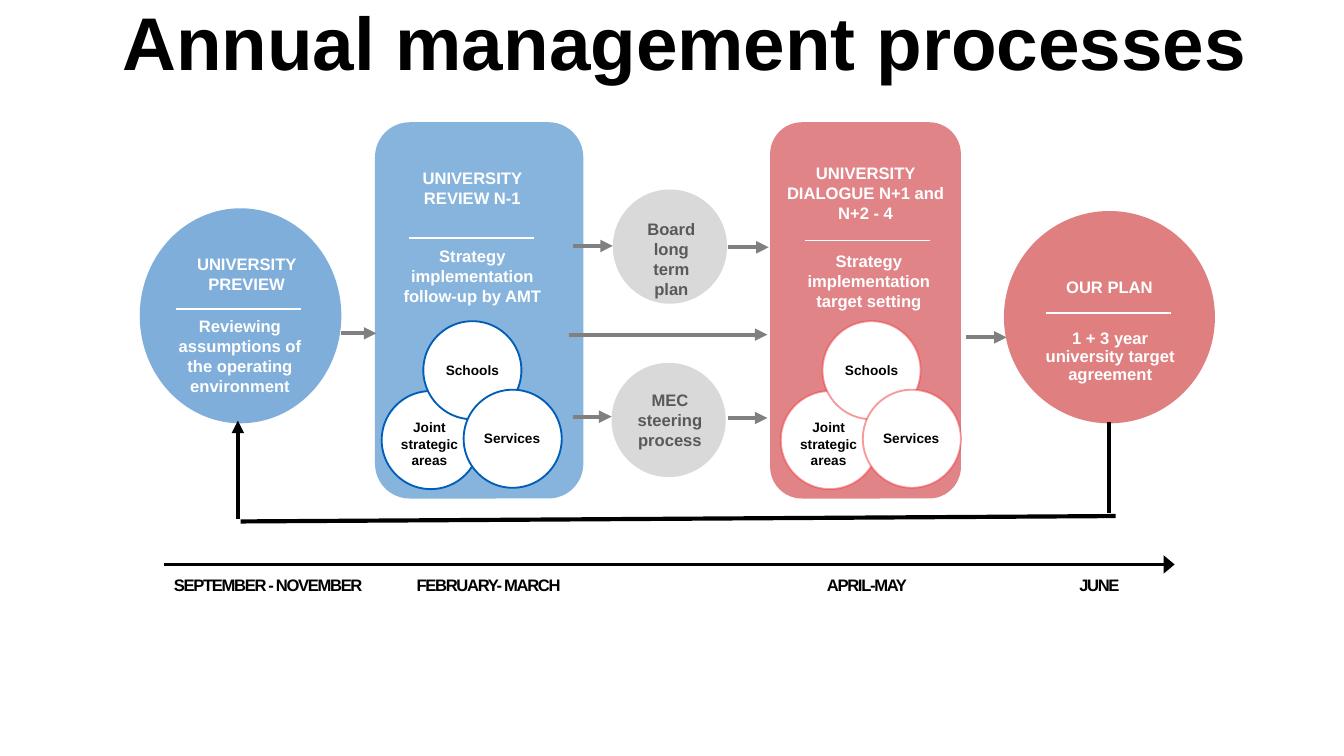
from dataclasses import dataclass
from typing import Optional

from lxml.etree import SubElement
from pptx import Presentation
from pptx.dml.color import RGBColor
from pptx.enum.shapes import MSO_CONNECTOR, MSO_SHAPE
from pptx.enum.text import MSO_ANCHOR, MSO_AUTO_SIZE, PP_ALIGN
from pptx.oxml.ns import qn
from pptx.util import Emu, Inches, Pt

COLUMNS, ROWS = 100, 56.25
SLIDE_WIDTH = Inches(10)
SLIDE_HEIGHT = Emu(SLIDE_WIDTH * 9 // 16)


@dataclass(frozen=True)
class Theme:
    font: str = "Arial"
    ink: str = "000000"
    paper: str = "FFFFFF"
    blue: str = "005EB8"
    review: str = "87B4DD"
    red: str = "EF363B"
    dialogue: str = "C40A12"
    plan: str = "C00000"
    process: str = "D9D9D9"
    process_ink: str = "595959"
    flow: str = "808080"
    title_size: float = 40
    text_size: float = 8.9
    unit_size: float = 7.3
    thin: float = 1
    axis: float = 1.5
    thick: float = 2.25


THEME = Theme()


@dataclass(frozen=True)
class Box:
    """A place on the grid, in columns and rows."""
    left: float
    top: float
    width: float
    height: float


@dataclass(frozen=True)
class Panel:
    outline: MSO_SHAPE
    box: Box
    fill: str
    opacity: int = 100
    line: Optional[str] = None
    line_opacity: int = 100


@dataclass(frozen=True)
class Label:
    text: str
    box: Box
    color: str = THEME.paper
    size: float = THEME.text_size
    line_spacing: Optional[float] = None


@dataclass(frozen=True)
class Stroke:
    start: tuple[float, float]
    end: tuple[float, float]
    color: str
    weight: float
    head_width: Optional[str] = None


def x(columns: float) -> Emu:
    return Emu(round(SLIDE_WIDTH * columns / COLUMNS))


def y(rows: float) -> Emu:
    return Emu(round(SLIDE_HEIGHT * rows / ROWS))


def place(box: Box) -> tuple[Emu, Emu, Emu, Emu]:
    return x(box.left), y(box.top), x(box.width), y(box.height)


def paint(fill, color: str, opacity: int) -> None:
    fill.solid()
    fill.fore_color.rgb = RGBColor.from_string(color)
    if opacity < 100:
        # The colour element is the only child of the solid fill.
        color_node = fill._xPr.find(qn("a:solidFill"))[0]
        SubElement(color_node, qn("a:alpha"), val=str(opacity * 1000))


def add_panel(slide, panel: Panel) -> None:
    shape = slide.shapes.add_shape(panel.outline, *place(panel.box))
    shape.shadow.inherit = False
    paint(shape.fill, panel.fill, panel.opacity)
    if panel.line:
        shape.line.width = Pt(THEME.thin)
        paint(shape.line.fill, panel.line, panel.line_opacity)
    else:
        shape.line.fill.background()


def add_run(paragraph, text: str, color: str, size: float):
    run = paragraph.add_run()
    run.text = text
    run.font.name = THEME.font
    run.font.size = Pt(size)
    run.font.bold = True
    run.font.color.rgb = RGBColor.from_string(color)
    return run


def add_label(slide, label: Label) -> None:
    frame = slide.shapes.add_textbox(*place(label.box)).text_frame
    frame.word_wrap = True
    frame.auto_size = MSO_AUTO_SIZE.SHAPE_TO_FIT_TEXT
    for index, line in enumerate(label.text.split("\n")):
        paragraph = frame.add_paragraph() if index else frame.paragraphs[0]
        paragraph.alignment = PP_ALIGN.CENTER
        if label.line_spacing:
            paragraph.line_spacing = label.line_spacing
        add_run(paragraph, line, label.color, label.size)


def add_month(slide, text: str, box: Box) -> None:
    frame = slide.shapes.add_textbox(*place(box)).text_frame
    frame.word_wrap = True
    frame.vertical_anchor = MSO_ANCHOR.MIDDLE
    frame.margin_left = Inches(0.07)
    frame.paragraphs[0].alignment = PP_ALIGN.CENTER
    run = add_run(frame.paragraphs[0], text, THEME.ink, THEME.text_size)
    run.font._element.set("spc", "-70")


def add_stroke(slide, stroke: Stroke) -> None:
    (x1, y1), (x2, y2) = stroke.start, stroke.end
    line = slide.shapes.add_connector(MSO_CONNECTOR.STRAIGHT, x(x1), y(y1), x(x2), y(y2))
    line.line.color.rgb = RGBColor.from_string(stroke.color)
    line.line.width = Pt(stroke.weight)
    if stroke.head_width:
        SubElement(line.line._get_or_add_ln(), qn("a:tailEnd"),
                   type="triangle", w=stroke.head_width)
    SubElement(line._element.spPr, qn("a:effectLst"))


def add_units(slide, left: float, color: str, opacity: int) -> None:
    """Draw the three overlapping unit circles, from the given column."""
    units = (  # name, circle offset and row, label offset, row, width and height
        ("Joint strategic areas", 0, 29.1, -0.2, 30.7, 7.5, 4.7),
        ("Schools", 3.1, 23.9, 3.1, 26.4, 7.3, 2.2),
        ("Services", 6.1, 29, 6.6, 31.5, 6.2, 2.2),
    )
    for name, dx, top, label_dx, label_top, width, height in units:
        circle = Box(left + dx, top, 7.3, 7.3)
        add_panel(slide, Panel(MSO_SHAPE.OVAL, circle, THEME.paper, 100, color, opacity))
        caption = Box(left + label_dx, label_top, width, height)
        add_label(slide, Label(name, caption, THEME.ink, THEME.unit_size))


def add_title(slide, text: str) -> None:
    title = slide.shapes.title
    title.left, title.top, title.width, title.height = place(Box(9.1, -0.3, 84.9, 10.9))
    frame = title.text_frame
    frame.margin_left = frame.margin_top = frame.margin_right = frame.margin_bottom = 0
    frame.vertical_anchor = MSO_ANCHOR.TOP
    frame.auto_size = MSO_AUTO_SIZE.NONE
    frame.paragraphs[0].alignment = PP_ALIGN.LEFT
    add_run(frame.paragraphs[0], text, THEME.ink, THEME.title_size)


PANELS = (
    Panel(MSO_SHAPE.OVAL, Box(74.7, 15.7, 15.7, 15.8), THEME.plan, 50),
    Panel(MSO_SHAPE.ROUNDED_RECTANGLE, Box(57.3, 9.1, 14.2, 28), THEME.dialogue, 50),
    Panel(MSO_SHAPE.ROUNDED_RECTANGLE, Box(27.9, 9.1, 15.5, 28), THEME.review),
    Panel(MSO_SHAPE.OVAL, Box(10.4, 15.5, 15, 16), THEME.blue, 50),
    Panel(MSO_SHAPE.OVAL, Box(45.6, 14.1, 8.5, 8.5), THEME.process),
    Panel(MSO_SHAPE.OVAL, Box(45.5, 27, 8.5, 8.5), THEME.process),
)
MONTHS = (
    ("SEPTEMBER - NOVEMBER", Box(12, 43.2, 16.2, 0.6)),
    ("FEBRUARY- MARCH", Box(28.6, 42.7, 15.8, 1.7)),
    ("APRIL-MAY", Box(60.8, 42.8, 7.7, 1.4)),
    ("JUNE", Box(78.1, 42.8, 7.7, 1.4)),
)
LABELS = (
    Label("UNIVERSITY PREVIEW", Box(13.1, 18.4, 10.5, 4)),
    Label("Reviewing assumptions of the operating environment", Box(11.4, 23, 12.9, 7)),
    Label("UNIVERSITY\nREVIEW N-1", Box(27.8, 12, 14.7, 4)),
    Label("Strategy implementation follow-up by AMT", Box(27.8, 17.8, 14.7, 5.5)),
    Label("Board long term plan", Box(46.2, 15.8, 7.5, 7), THEME.process_ink),
    Label("MEC steering process", Box(45.5, 28.5, 8.7, 5.5), THEME.process_ink),
    Label("UNIVERSITY DIALOGUE N+1 and N+2 - 4", Box(57, 11.6, 14.8, 5.5)),
    Label("Strategy implementation\ntarget setting", Box(57.3, 18.2, 14.7, 5.5)),
    Label("OUR PLAN", Box(77.7, 20.1, 9.7, 2.5)),
    Label("1 + 3 year university target agreement", Box(76.7, 24.1, 11.8, 5.1), line_spacing=0.9),
)
DIVIDERS = ((13.1, 23), (30.4, 17.7), (59.9, 17.9), (77.8, 23.3))
DIVIDER_WIDTH = 9.3
FLOWS = (  # start column, end column, row
    (25.4, 28, 24.8), (42.6, 45.6, 18.3), (42.6, 45.5, 31), (54.2, 57.2, 18.4),
    (54.2, 57.1, 31.1), (42.3, 57.1, 24.9), (71.9, 74.9, 25.1),
)
STROKES = (
    Stroke((12.2, 42), (87.4, 42), THEME.ink, THEME.axis, "lg"),
    *(Stroke((left, row), (left + DIVIDER_WIDTH, row), THEME.paper, THEME.thin)
      for left, row in DIVIDERS),
    *(Stroke((left, row), (right, row), THEME.flow, THEME.thick, "med")
      for left, right, row in FLOWS),
    Stroke((82.5, 31.4), (82.5, 38.2), THEME.ink, THEME.thick),
    Stroke((83, 38.4), (17.9, 38.8), THEME.ink, THEME.thick),
    Stroke((17.7, 38.6), (17.7, 31.3), THEME.ink, THEME.thick, "med"),
)


def main() -> None:
    deck = Presentation()
    deck.slide_width, deck.slide_height = SLIDE_WIDTH, SLIDE_HEIGHT
    slide = deck.slides.add_slide(deck.slide_layouts.get_by_name("Title Only"))
    add_title(slide, "Annual management processes")
    for panel in PANELS:
        add_panel(slide, panel)
    for month, box in MONTHS:
        add_month(slide, month, box)
    add_units(slide, 28.4, THEME.blue, 100)
    add_units(slide, 58.1, THEME.red, 50)
    for label in LABELS:
        add_label(slide, label)
    for stroke in STROKES:
        add_stroke(slide, stroke)
    deck.save("out.pptx")


if __name__ == "__main__":
    main()
